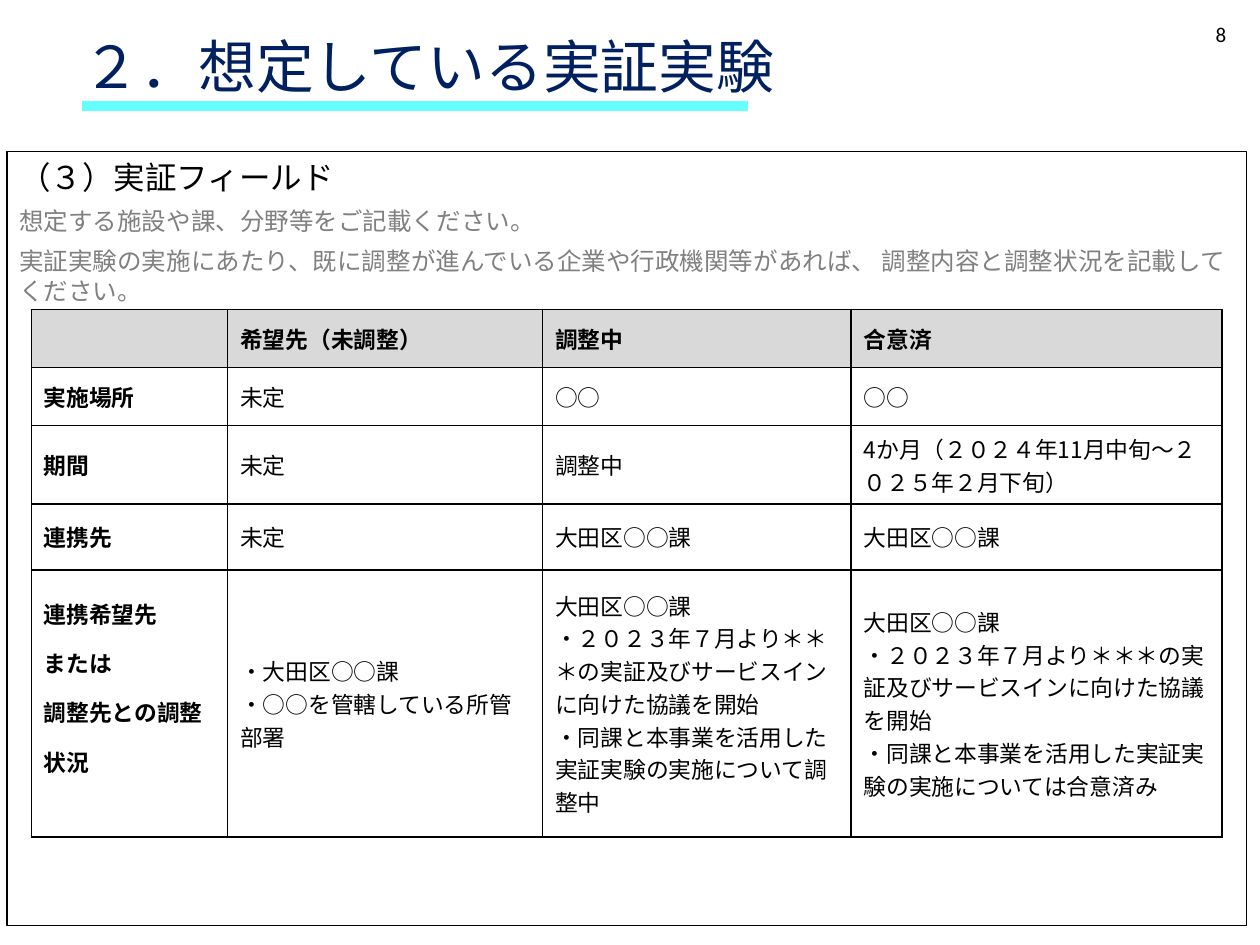
from dataclasses import dataclass

from lxml.etree import SubElement
from pptx import Presentation
from pptx.dml.color import RGBColor as RGB
from pptx.enum.shapes import MSO_CONNECTOR, MSO_SHAPE
from pptx.enum.text import MSO_ANCHOR as ANCHOR, PP_ALIGN as ALIGN
from pptx.oxml.ns import qn
from pptx.util import Cm, Pt


@dataclass(frozen=True)
class Theme:
    title_font: str = "Calibri"
    body_font: str = "Noto Sans CJK JP"
    navy: RGB = RGB(0x00, 0x20, 0x60)
    cyan: RGB = RGB(0x66, 0xFF, 0xFF)
    black: RGB = RGB(0x00, 0x00, 0x00)
    grey: RGB = RGB(0x80, 0x80, 0x80)
    header: RGB = RGB(0xD9, 0xD9, 0xD9)
    title: Pt = Pt(33)
    heading: Pt = Pt(18)
    guide: Pt = Pt(14)
    cell: Pt = Pt(13)
    number: Pt = Pt(12)


THEME = Theme()

HEADING = "（３）実証フィールド"
GUIDES = [
    "想定する施設や課、分野等をご記載ください。",
    "実証実験の実施にあたり、既に調整が進んでいる企業や行政機関等があれば、 "
    "調整内容と調整状況を記載してください。",
]
TALKS = ["大田区○○課",
         "・２０２３年７月より＊＊＊の実証及びサービスインに向けた協議を開始"]

# Each cell is a list of paragraphs.
ROWS = [
    [[], ["希望先（未調整）"], ["調整中"], ["合意済"]],
    [["実施場所"], ["未定"], ["○○"], ["○○"]],
    [["期間"], ["未定"], ["調整中"],
     ["4か月（２０２４年11月中旬～２０２５年２月下旬）"]],
    [["連携先"], ["未定"], ["大田区○○課"], ["大田区○○課"]],
    [["連携希望先", "または", "調整先との調整状況"],
     ["・大田区○○課", "・○○を管轄している所管部署"],
     TALKS + ["・同課と本事業を活用した実証実験の実施について調整中"],
     TALKS + ["・同課と本事業を活用した実証実験の実施については合意済み"]],
]
COL_WIDTHS = [3.96, 6.35, 6.22, 7.47]
ROW_HEIGHTS = [1.17, 1.17, 1.58, 1.33, 5.38]


def next_paragraph(tf):
    """Return the empty first paragraph, or a new one after the last."""
    first = tf.paragraphs[0]
    return tf.add_paragraph() if first.runs else first


def add_text(tf, text, size, color, font=THEME.body_font, bold=False):
    p = next_paragraph(tf)
    r = p.add_run()
    r.text = text
    r.font.size, r.font.bold, r.font.name = size, bold, font
    r.font.color.rgb = color
    SubElement(r.font._element, qn("a:ea"), typeface=font)
    return p


def add_label(slide, box, text, size, color):
    tf = slide.shapes.add_textbox(*map(Cm, box)).text_frame
    tf.word_wrap = True
    return add_text(tf, text, size, color, THEME.title_font)


def add_underline(slide, left, right, y):
    line = slide.shapes.add_connector(
        MSO_CONNECTOR.STRAIGHT, Cm(left), Cm(y), Cm(right), Cm(y))
    line.line.color.rgb = THEME.cyan
    line.line.width = Pt(6)
    SubElement(line._element.spPr, qn("a:effectLst"))


def add_body(slide, box):
    sp = slide.shapes.add_shape(MSO_SHAPE.RECTANGLE, *map(Cm, box))
    sp.shadow.inherit = False
    sp.fill.background()
    sp.line.color.rgb = THEME.black
    sp.line.width = Pt(0.75)
    tf = sp.text_frame
    tf.word_wrap = True
    tf.vertical_anchor = ANCHOR.TOP
    add_text(tf, HEADING, THEME.heading, THEME.black)
    for guide in GUIDES:
        add_text(tf, guide, THEME.guide, THEME.grey)
    for p in tf.paragraphs:
        p.alignment = ALIGN.LEFT
        p.space_before = Pt(6)


def set_borders(cell):
    tc_pr = cell._tc.get_or_add_tcPr()
    for i, side in enumerate(("lnL", "lnR", "lnT", "lnB")):
        ln = tc_pr.makeelement(qn(f"a:{side}"), {"w": str(Pt(1))})
        fill = SubElement(ln, qn("a:solidFill"))
        SubElement(fill, qn("a:srgbClr"), val=str(THEME.black))
        tc_pr.insert(i, ln)


def fill_cell(cell, paragraphs, is_header, is_label):
    cell.vertical_anchor = ANCHOR.MIDDLE
    if is_header:
        cell.fill.solid()
        cell.fill.fore_color.rgb = THEME.header
    else:
        cell.fill.background()
    set_borders(cell)
    is_long_label = is_label and len(paragraphs) > 1
    if is_long_label:
        cell.margin_bottom = Cm(1.1)
    for text in paragraphs:
        p = add_text(cell.text_frame, text, THEME.cell, THEME.black,
                     bold=is_header or is_label)
        if is_long_label:
            p.line_spacing = 1.5


def add_field_table(slide, left, top):
    table = slide.shapes.add_table(
        len(ROWS), len(COL_WIDTHS), Cm(left), Cm(top),
        Cm(sum(COL_WIDTHS)), Cm(sum(ROW_HEIGHTS))).table
    table.first_row = table.horz_banding = False
    for column, width in zip(table.columns, COL_WIDTHS):
        column.width = Cm(width)
    for r, (row, height) in enumerate(zip(table.rows, ROW_HEIGHTS)):
        row.height = Cm(height)
        for c, cell in enumerate(row.cells):
            fill_cell(cell, ROWS[r][c], is_header=r == 0, is_label=c == 0)


def main():
    prs = Presentation()
    prs.slide_width, prs.slide_height = Cm(25.4), Cm(19.05)
    slide = prs.slides.add_slide(prs.slide_layouts[6])

    title = add_label(slide, (1.42, 0.66, 21.87, 2.13),
                      "２．想定している実証実験", THEME.title, THEME.navy)
    title.line_spacing = 0.9
    add_underline(slide, 1.65, 15.07, 2.14)
    number = add_label(slide, (19.25, 0.3, 5.72, 1.02),
                       "8", THEME.number, THEME.black)
    number.alignment = ALIGN.RIGHT

    add_body(slide, (0.14, 3.06, 24.99, 15.6))
    add_field_table(slide, 0.63, 6.24)
    prs.save("out.pptx")


if __name__ == "__main__":
    main()
